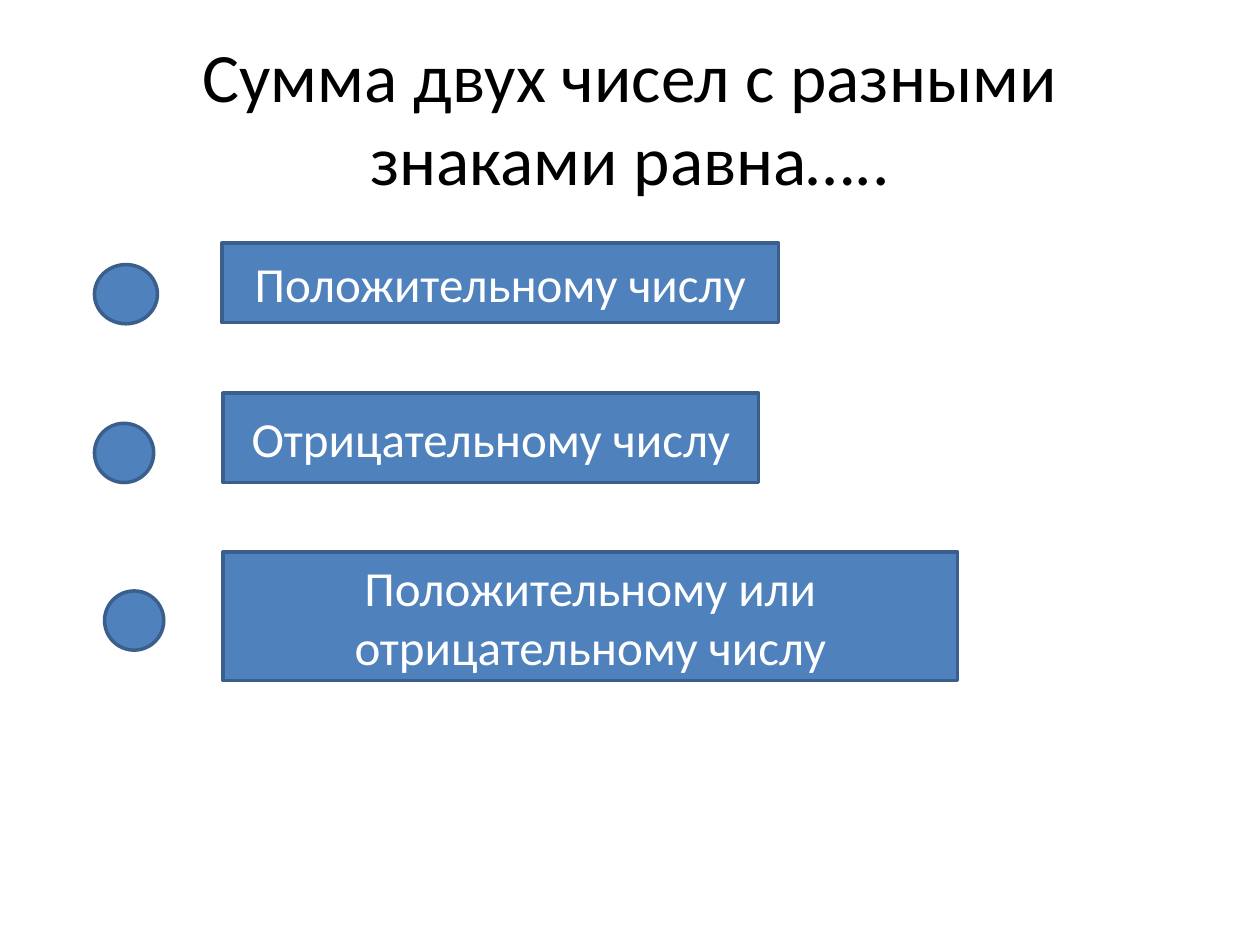
from pptx import Presentation
from pptx.dml.color import RGBColor
from pptx.enum.shapes import MSO_SHAPE as Shape
from pptx.enum.text import MSO_ANCHOR as Anchor, PP_ALIGN as Align
from pptx.util import Inches, Pt

BLACK = RGBColor(0x00, 0x00, 0x00)
WHITE = RGBColor(0xFF, 0xFF, 0xFF)
BLUE = RGBColor(0x4F, 0x81, 0xBD)
DARK_BLUE = RGBColor(0x3A, 0x5F, 0x8C)
FONT = "Calibri"

TITLE = "Сумма двух чисел с разными знаками равна….."
# Each answer: text, marker box, label box (left, top, width, height in inches)
ANSWERS = [
    ("Положительному числу", (0.75, 2.1, 0.5, 0.47), (1.76, 1.93, 4.42, 0.63)),
    ("Отрицательному числу", (0.75, 3.36, 0.47, 0.47), (1.77, 3.12, 4.25, 0.71)),
    ("Положительному или отрицательному числу",
     (0.83, 4.69, 0.47, 0.47), (1.77, 4.38, 5.83, 1.02)),
]


def write_centred(shape, text, size, color):
    frame = shape.text_frame
    frame.word_wrap = True
    frame.vertical_anchor = Anchor.MIDDLE
    para = frame.paragraphs[0]
    para.alignment = Align.CENTER
    span = para.add_run()
    span.text = text
    span.font.name = FONT
    span.font.size = Pt(size)
    span.font.color.rgb = color


def add_title(page, box):
    title = page.shapes.add_textbox(*map(Inches, box))
    write_centred(title, TITLE, 39.6, BLACK)


def add_blue_shape(page, kind, box):
    shape = page.shapes.add_shape(kind, *map(Inches, box))
    shape.shadow.inherit = False
    shape.fill.solid()
    shape.fill.fore_color.rgb = BLUE
    shape.line.color.rgb = DARK_BLUE
    shape.line.width = Pt(2)
    return shape


def add_answer(page, text, marker_box, label_box):
    add_blue_shape(page, Shape.OVAL, marker_box)
    label = add_blue_shape(page, Shape.RECTANGLE, label_box)
    write_centred(label, text, 28, WHITE)


def main():
    deck = Presentation()
    deck.slide_width, deck.slide_height = Inches(10), Inches(7.5)
    page = deck.slides.add_slide(deck.slide_layouts[6])
    add_title(page, (0.5, 0.3, 9, 1.25))
    for answer in ANSWERS:
        add_answer(page, *answer)
    deck.save("out.pptx")


if __name__ == "__main__":
    main()
